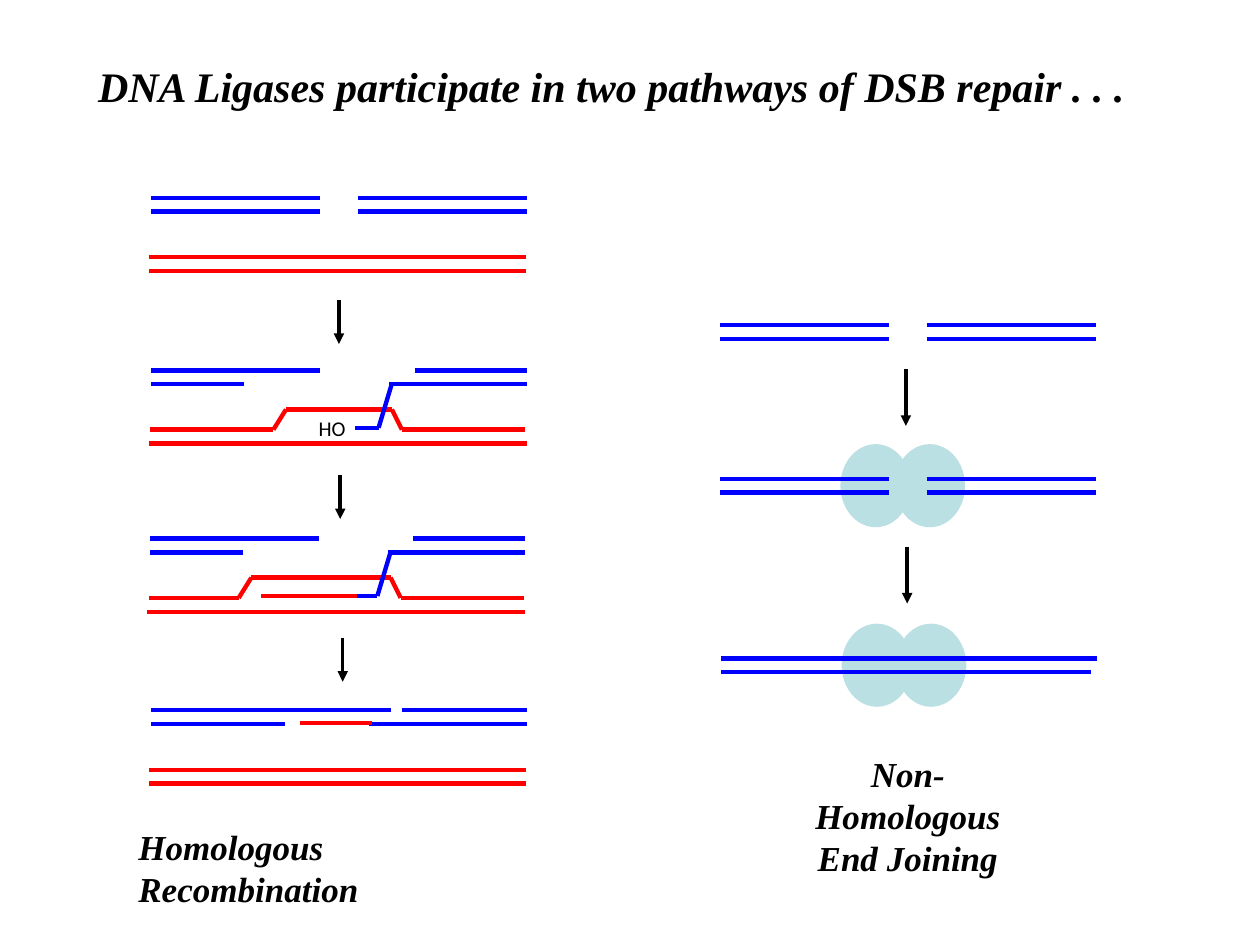
from itertools import pairwise

from lxml.etree import SubElement
from pptx import Presentation
from pptx.dml.color import RGBColor
from pptx.enum.shapes import MSO_CONNECTOR, MSO_SHAPE
from pptx.enum.text import MSO_AUTO_SIZE, PP_ALIGN
from pptx.oxml.ns import qn
from pptx.util import Inches, Pt

BLUE = RGBColor(0x00, 0x00, 0xFF)
RED = RGBColor(0xFF, 0x00, 0x00)
BLACK = RGBColor(0x00, 0x00, 0x00)
TEAL = RGBColor(0xBB, 0xE0, 0xE3)

COLS, ROWS = 100, 75
STRAND_GAP = 1.1
HEADING = {"name": "Times New Roman", "bold": True, "italic": True}
LABEL = {"name": "Calibri"}


class Diagram:
    def __init__(self, prs):
        self.s = prs.slides.add_slide(prs.slide_layouts[6])
        self.col = prs.slide_width / COLS
        self.row = prs.slide_height / ROWS

    def at(self, x, y):
        return round(x * self.col), round(y * self.row)

    def line(self, start, end, color, width=2.5):
        c = self.s.shapes.add_connector(
            MSO_CONNECTOR.STRAIGHT, *self.at(*start), *self.at(*end))
        c.line.color.rgb = color
        c.line.width = Pt(width)
        SubElement(c._element.spPr, qn("a:effectLst"))
        return c

    def path_line(self, points, color):
        for start, end in pairwise(points):
            self.line(start, end, color)

    def strand(self, y, color, *spans):
        for x1, x2 in spans:
            self.line((x1, y), (x2, y), color)

    def arrow(self, x, y, length):
        c = self.line((x, y), (x, y + length), BLACK, 2)
        SubElement(c.line._get_or_add_ln(), qn("a:tailEnd"), type="triangle")

    def protein(self, x, y):
        for left in (x, x + 4.3):
            sp = self.s.shapes.add_shape(
                MSO_SHAPE.OVAL, *self.at(left, y), *self.at(5.6, 6.6))
            sp.shadow.inherit = False
            sp.fill.solid()
            sp.fill.fore_color.rgb = TEAL
            sp.line.fill.background()

    def text(self, x, y, w, h, lines, size, style, wrap=False, align=PP_ALIGN.LEFT):
        tf = self.s.shapes.add_textbox(*self.at(x, y), *self.at(w, h)).text_frame
        tf.word_wrap = wrap
        tf.auto_size = MSO_AUTO_SIZE.SHAPE_TO_FIT_TEXT
        for i, words in enumerate(lines):
            p = tf.add_paragraph() if i else tf.paragraphs[0]
            p.alignment = align
            r = p.add_run()
            r.text = words
            for key, value in {**style, "size": Pt(size)}.items():
                setattr(r.font, key, value)
            r.font.color.rgb = BLACK

    def broken_duplex(self, x, y):
        for top in (y, y + STRAND_GAP):
            self.strand(top, BLUE, (x, x + 13.4), (x + 16.4, x + 29.8))

    def template_duplex(self, x, y):
        for top in (y, y + STRAND_GAP):
            self.strand(top, RED, (x, x + 29.9))

    def strand_invasion(self, x, y, bubble):
        right = x + 29.8
        self.strand(y, BLUE, (x, x + 13.4), (x + 20.9, right))
        self.strand(y + STRAND_GAP, BLUE, (x, x + 7.4), (x + 18.9, right))
        self.path_line([(x - 0.1, y + 4.7), (x + bubble, y + 4.7),
                        (x + bubble + 1, y + 3.1), (x + 19.1, y + 3.1),
                        (x + 19.9, y + 4.7), (right - 0.1, y + 4.7)], RED)
        self.strand(y + 5.8, RED, (x - 0.2, right))
        self.path_line([(x + 16.2, y + 4.55), (x + 18.05, y + 4.55),
                        (x + 19.1, y + 1.05)], BLUE)


def draw_homologous(d):
    d.broken_duplex(12, 15.7)
    d.template_duplex(11.85, 20.4)
    d.arrow(26.9, 23.8, 3.5)
    d.strand_invasion(12, 29.4, 9.7)
    d.text(24.3, 32.5, 4.7, 3, ["HO"], 12, LABEL)
    d.arrow(27, 37.7, 3.5)
    d.strand_invasion(11.9, 42.75, 7.05)
    d.strand(47.3, RED, (20.7, 28.3))
    d.arrow(27.2, 50.6, 3.5)
    d.strand(56.35, BLUE, (12, 31), (31.9, 41.8))
    d.strand(57.45, BLUE, (12, 22.6), (29.3, 41.8))
    d.strand(57.4, RED, (23.8, 29.5))
    d.template_duplex(11.85, 61.1)
    d.text(10, 65, 32, 7.7, ["Homologous Recombination"], 20, HEADING, wrap=True)


def draw_end_joining(d):
    d.broken_duplex(57.15, 25.8)
    d.arrow(71.9, 29.3, 4.5)
    d.protein(66.7, 35.25)
    d.broken_duplex(57.15, 38)
    d.arrow(72, 43.4, 4.5)
    d.protein(66.8, 49.5)
    d.strand(52.25, BLUE, (57.25, 87.1))
    d.strand(53.35, BLUE, (57.25, 86.6))
    d.text(60.8, 59.2, 22.5, 7.7, ["Non-Homologous", "End Joining"], 20,
           HEADING, align=PP_ALIGN.CENTER)


def main():
    prs = Presentation()
    prs.slide_width, prs.slide_height = Inches(10), Inches(7.5)
    d = Diagram(prs)
    d.text(6.8, 4.3, 88.2, 5,
           ["DNA Ligases participate in two pathways of DSB repair . . ."],
           24, HEADING, wrap=True)
    draw_homologous(d)
    draw_end_joining(d)
    prs.save("out.pptx")


if __name__ == "__main__":
    main()
